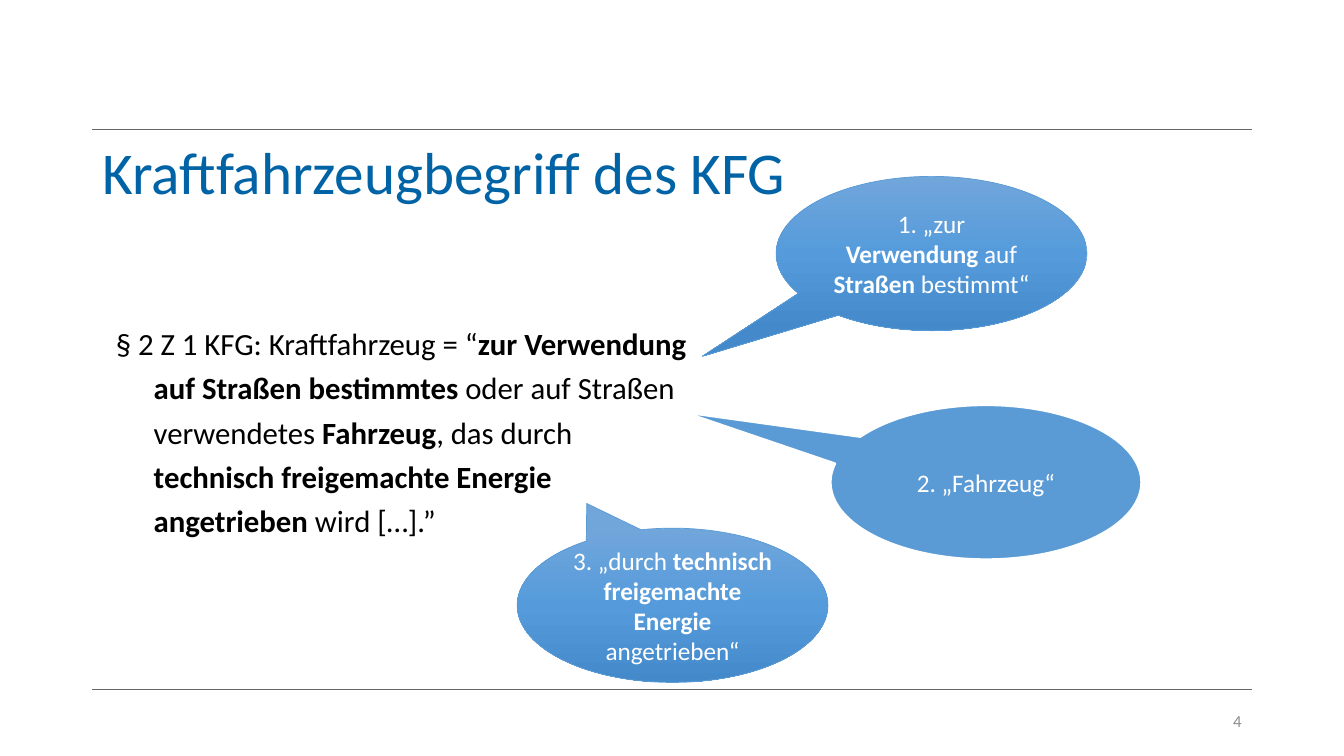
"""Build the slide on the definition of a motor vehicle."""
import copy
from dataclasses import dataclass

import pptx
import pptx.dml.color
import pptx.enum.shapes
import pptx.enum.text
import pptx.oxml.ns
import pptx.util
from lxml import etree

Pt = pptx.util.Pt
ALIGN = pptx.enum.text.PP_ALIGN
ANCHOR = pptx.enum.text.MSO_ANCHOR
qn = pptx.oxml.ns.qn


@dataclass(frozen=True)
class Theme:
    """Colours, font and type sizes of the slide."""
    font: str = "Calibri"
    title: str = "0063A6"
    body: str = "000000"
    number: str = "8C8C8C"
    rule: str = "666666"
    white: str = "FFFFFF"
    accent: str = "5B9BD5"
    gradient: tuple = ("71A6DB", "559BDB", "448ACA")
    title_size: float = 42.3
    body_size: float = 22
    callout_size: float = 18
    number_size: float = 12


THEME = Theme()


def rgb(value):
    """Return the colour object for a hex value."""
    return pptx.dml.color.RGBColor.from_string(value)


def place(shape, box):
    """Move and size a shape to a box in points."""
    shape.left, shape.top, shape.width, shape.height = map(Pt, box)


def write(paragraph, parts, size, colour, alignment=ALIGN.LEFT):
    """Fill a paragraph with parts, every second of them bold."""
    paragraph.alignment = alignment
    paragraph.font.name = THEME.font
    paragraph.font.size = Pt(size)
    paragraph.font.color.rgb = rgb(colour)
    for index, part in enumerate(parts):
        run = paragraph.add_run()
        run.text = part
        if index % 2:
            run.font.bold = True


def add_rules(slide, box):
    """Draw a line along the top and the bottom of the box."""
    left, top, width, height = box
    for y in (top, top + height):
        rule = slide.shapes.add_connector(
            pptx.enum.shapes.MSO_CONNECTOR.STRAIGHT,
            Pt(left), Pt(y), Pt(left + width), Pt(y))
        rule.line.color.rgb = rgb(THEME.rule)
        rule.line.width = Pt(0.75)
        etree.SubElement(rule._element.spPr, qn("a:effectLst"))


def add_title(slide, box, text):
    """Put the heading at the top of the box."""
    title = slide.shapes.title
    place(title, box)
    frame = title.text_frame
    frame.auto_size = pptx.enum.text.MSO_AUTO_SIZE.NONE
    frame.vertical_anchor = ANCHOR.TOP
    frame.margin_top = Pt(0.4)
    paragraph = frame.paragraphs[0]
    paragraph.line_spacing = 0.9
    write(paragraph, [text], THEME.title_size, THEME.title)


def add_definition(slide, box, parts):
    """Put the legal definition in the box with a hanging indent."""
    body = slide.placeholders[1]
    place(body, box)
    frame = body.text_frame
    frame.auto_size = pptx.enum.text.MSO_AUTO_SIZE.NONE
    paragraph = frame.paragraphs[0]
    properties = paragraph._p.get_or_add_pPr()
    properties.set("marL", str(Pt(27)))
    properties.set("indent", str(-Pt(27)))
    etree.SubElement(properties, qn("a:buNone"))
    paragraph.line_spacing = 1.2
    paragraph.space_before = Pt(0)
    write(paragraph, parts, THEME.body_size, THEME.body)


def add_callout(slide, box, tip, parts, shaded):
    """Draw an elliptical callout in the box, its tip relative to the centre."""
    callout = slide.shapes.add_shape(
        pptx.enum.shapes.MSO_SHAPE.OVAL_CALLOUT, *map(Pt, box))
    callout.shadow.inherit = False
    callout.adjustments[0], callout.adjustments[1] = tip
    if shaded:
        callout.fill.gradient()
        callout.fill.gradient_angle = 270
        stop_list = callout._element.spPr.find(".//" + qn("a:gsLst"))
        stop_list.insert(1, copy.deepcopy(stop_list[0]))
        for index, stop in enumerate(callout.fill.gradient_stops):
            stop.color.rgb = rgb(THEME.gradient[index])
            stop.position = index / 2
    else:
        callout.fill.solid()
        callout.fill.fore_color.rgb = rgb(THEME.accent)
    callout.line.color.rgb = rgb(THEME.accent if shaded else THEME.white)
    callout.line.width = Pt(0.5 if shaded else 1.5)
    frame = callout.text_frame
    frame.word_wrap = True
    frame.vertical_anchor = ANCHOR.MIDDLE
    write(frame.paragraphs[0], parts, THEME.callout_size, THEME.white, ALIGN.CENTER)


def add_slide_number(slide, box, text):
    """Put the slide number at the right of the box."""
    number = slide.shapes.add_textbox(*map(Pt, box))
    number.text_frame.word_wrap = True
    number.text_frame.vertical_anchor = ANCHOR.MIDDLE
    write(number.text_frame.paragraphs[0], [text],
          THEME.number_size, THEME.number, ALIGN.RIGHT)


def add_definition_slide(presentation):
    """Add the slide with the definition and its three callouts."""
    slide = presentation.slides.add_slide(presentation.slide_layouts[1])
    add_rules(slide, (66, 92.2, 828, 400.3))
    add_title(slide, (66, 102.2, 828, 93.6), "Kraftfahrzeugbegriff des KFG")
    add_definition(slide, (75.6, 223, 427.7, 165), [
        "§ 2 Z 1 KFG: Kraftfahrzeug = “",
        "zur Verwendung auf Straßen bestimmtes",
        " oder auf Straßen verwendetes ", "Fahrzeug", ", das durch ",
        "technisch freigemachte Energie angetrieben ", "wird […].”"])
    add_slide_number(slide, (678, 500.4, 216, 28.8), "4")
    callouts = [
        ((554.4, 126), (-0.738, 0.667), True,
         ["1. „zur ", "Verwendung", " auf ", "Straßen", " bestimmt“"]),
        ((593.3, 289.4), (-0.968, -0.452), False, ["2. „Fahrzeug“"]),
        ((369.4, 377.3), (-0.276, -0.66), True,
         ["3. „durch ", "technisch freigemachte Energie ", "angetrieben“"]),
    ]
    for corner, tip, shaded, parts in callouts:
        add_callout(slide, (*corner, 222, 110.2), tip, parts, shaded)


def main():
    """Create and save the presentation."""
    presentation = pptx.Presentation()
    presentation.slide_width = Pt(960)
    presentation.slide_height = Pt(540)
    add_definition_slide(presentation)
    presentation.save("out.pptx")


if __name__ == "__main__":
    main()
